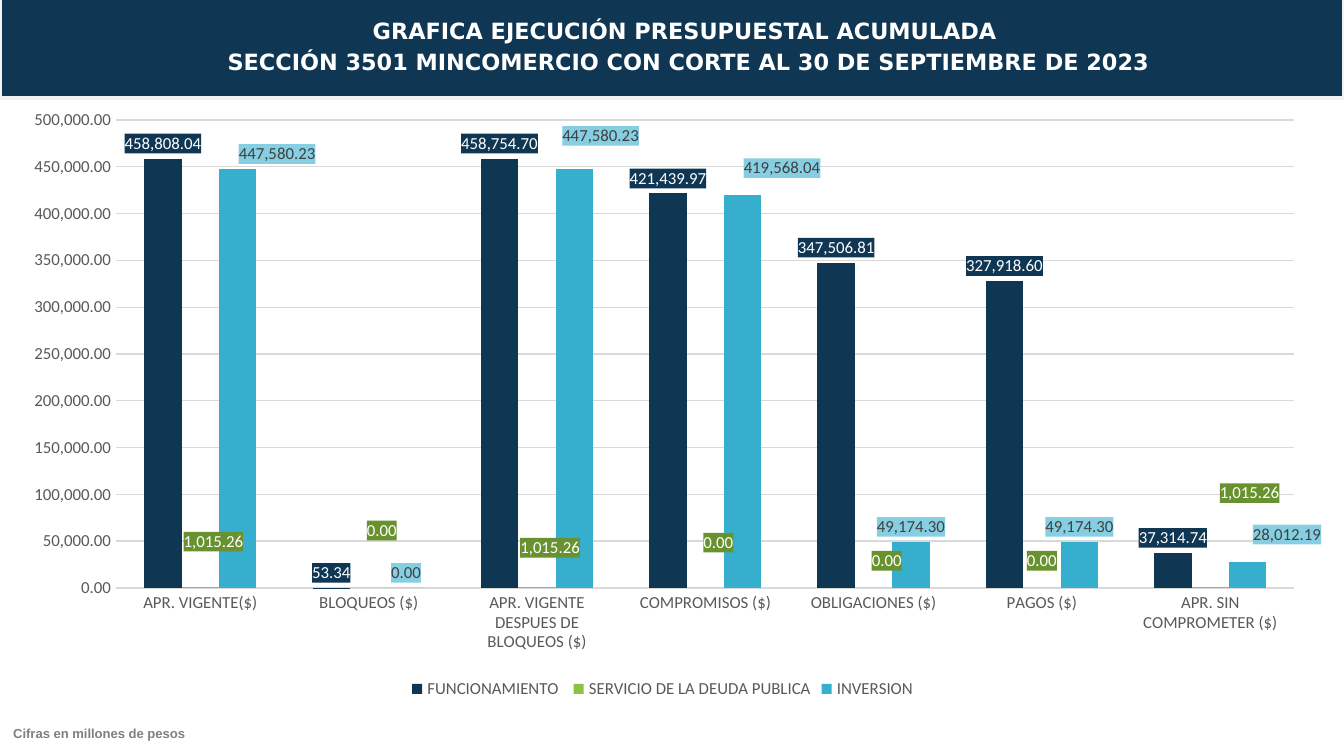
from copy import deepcopy
from dataclasses import dataclass
from lxml import etree
from pptx import Presentation
from pptx.chart.data import CategoryChartData as Data
from pptx.dml.color import RGBColor as RGB
from pptx.enum.chart import XL_CHART_TYPE as Kind, XL_LABEL_POSITION as Spot
from pptx.enum.chart import XL_LEGEND_POSITION as Side, XL_TICK_MARK as Tick
from pptx.enum.text import MSO_ANCHOR as Anchor, MSO_AUTO_SIZE as Fit, PP_ALIGN as Align
from pptx.oxml.ns import qn
from pptx.util import Inches, Pt


@dataclass(frozen=True)
class Theme:
    navy: str = "0F3754"
    green: str = "8BC145"
    blue: str = "36AFCE"
    moss: str = "68922F"
    sky: str = "86CFE2"
    white: str = "FFFFFF"
    pale: str = "F2F2F2"
    grid: str = "D9D9D9"
    gray: str = "808080"
    text: str = "595959"
    dark: str = "404040"
    head: int = 12
    base: int = 10
    small: int = 9
    note: int = 7


T = Theme()
NUM = "#,##0.00"
CATS = ["APR. VIGENTE($)", "BLOQUEOS ($)", "APR. VIGENTE DESPUES DE BLOQUEOS ($)",
        "COMPROMISOS ($)", "OBLIGACIONES ($)", "PAGOS ($)", "APR. SIN COMPROMETER ($)"]
ROWS = [
    dict(name="FUNCIONAMIENTO ", bar=T.navy, tag=T.navy, ink=T.white, moves={},
         vals=[458808.04, 53.34, 458754.70, 421439.97, 347506.81, 327918.60, 37314.74]),
    dict(name="SERVICIO DE LA DEUDA PUBLICA", bar=T.green, tag=T.moss, ink=T.white,
         vals=[1015.26, 0, 1015.26, 0, 0, 0, 1015.26],
         moves={0: (0.01, -0.05), 1: (0.01, -0.07), 2: (0.01, -0.04), 3: (0.01, -0.05),
                4: (0.01, -0.02), 5: (0, -0.02), 6: (0.03, -0.13)}),
    dict(name="INVERSION ", bar=T.blue, tag=T.sky, ink=T.dark,
         vals=[447580.23, 0, 447580.23, 419568.04, 49174.30, 49174.30, 28012.19],
         moves={0: (0.03, 0), 2: (0.02, -0.03), 3: (0.03, -0.02), 6: (0.03, -0.02)}),
]


def apply(item, traits):
    for key, val in traits.items():
        setattr(item, key, val)


def style(font, size, color, name="Calibri", bold=False):
    apply(font, dict(size=Pt(size), name=name, bold=bold))
    font.color.rgb = RGB.from_string(color)


def paint(fill, color):
    fill.solid()
    fill.fore_color.rgb = RGB.from_string(color)


def layout(**vals):
    root = etree.Element(qn("c:layout"))
    box = etree.SubElement(root, qn("c:manualLayout"))
    for key, val in vals.items():
        etree.SubElement(box, qn(f"c:{key}")).set("val", str(val))
    return root


def add_head(slide):
    band = slide.shapes.title
    apply(band, dict(left=Inches(0), top=Inches(-0.02), width=Inches(10), height=Inches(0.75)))
    paint(band.fill, T.navy)
    paint(band.line.fill, T.pale)
    band.line.width = Pt(2.25)
    frame = band.text_frame
    apply(frame, dict(margin_left=Inches(0.25), margin_right=0, margin_top=0, margin_bottom=0,
                      vertical_anchor=Anchor.MIDDLE, auto_size=Fit.NONE, word_wrap=True))
    frame.text = ("GRAFICA EJECUCIÓN PRESUPUESTAL ACUMULADA \n"
                  "SECCIÓN 3501 MINCOMERCIO CON CORTE AL 30 DE SEPTIEMBRE DE 2023")
    for para in frame.paragraphs:
        apply(para, dict(alignment=Align.CENTER, line_spacing=0.9, space_before=Pt(3.6)))
        style(para.runs[0].font, T.head, T.white, "DejaVu Sans", True)


def add_note(slide):
    box = slide.shapes.add_textbox(Inches(0), Inches(5.36), Inches(9.93), Inches(0.21))
    frame = box.text_frame
    apply(frame, dict(word_wrap=True, auto_size=Fit.SHAPE_TO_FIT_TEXT))
    para = frame.paragraphs[0]
    para.text = "Cifras en millones de pesos"
    apply(para, dict(line_spacing=0.9, space_before=Pt(8)))
    style(para.runs[0].font, T.note, T.gray, "Arial", True)


def style_axis(axis):
    apply(axis, dict(major_tick_mark=Tick.NONE, minor_tick_mark=Tick.NONE))
    style(axis.tick_labels.font, T.small, T.text)
    axis.format.line.fill.background()


def move_tag(tag, spot, parts):
    for part in parts:
        for old in tag.findall(part.tag):
            tag.remove(old)
    last = tag.find(qn("c:idx"))
    for part in [layout(x=spot[0], y=spot[1]), *map(deepcopy, parts)]:
        last.addnext(part)
        last = part


def add_tags(series, node, row):
    tags = series.data_labels
    apply(tags, dict(show_value=True, number_format=NUM, number_format_is_linked=False,
                     position=Spot.OUTSIDE_END))
    style(tags.font, T.small, row["ink"])
    group = node.find(qn("c:dLbls"))
    for lead in group.findall(qn("c:showLeaderLines")):
        lead.set("val", "0")
    look = etree.Element(qn("c:spPr"))
    fill = etree.SubElement(look, qn("a:solidFill"))
    etree.SubElement(fill, qn("a:srgbClr")).set("val", row["tag"])
    group.find(qn("c:numFmt")).addnext(look)
    parts = [group.find(qn(f"c:{name}")) for name in ("numFmt", "spPr", "txPr")]
    for idx in row["moves"]:
        series.points[idx].data_label.position = Spot.OUTSIDE_END
    for tag in group.findall(qn("c:dLbl")):
        idx = int(tag.find(qn("c:idx")).get("val"))
        move_tag(tag, row["moves"][idx], parts)


def add_bars(slide):
    data = Data(number_format=NUM)
    data.categories = CATS
    for row in ROWS:
        data.add_series(row["name"], row["vals"])
    chart = slide.shapes.add_chart(Kind.COLUMN_CLUSTERED, Inches(0.06), Inches(0.73),
                                   Inches(9.77), Inches(4.51), data).chart
    apply(chart, dict(has_title=False, has_legend=True))
    apply(chart.font, dict(size=Pt(T.base), name="Calibri"))
    apply(chart.legend, dict(position=Side.BOTTOM, include_in_layout=False))
    style(chart.legend.font, T.small, T.text)
    style_axis(chart.category_axis)
    axis = chart.value_axis
    style_axis(axis)
    apply(axis, dict(minimum_scale=0, maximum_scale=500000, major_unit=50000,
                     has_major_gridlines=True))
    apply(axis.tick_labels, dict(number_format=NUM, number_format_is_linked=False))
    line = axis.major_gridlines.format.line
    paint(line.fill, T.grid)
    line.width = Pt(0.75)
    plot = chart.plots[0]
    apply(plot, dict(gap_width=150, overlap=0, vary_by_categories=False))
    nodes = list(chart.element.iter(qn("c:ser")))
    for series, node, row in zip(plot.series, nodes, ROWS):
        paint(series.format.fill, row["bar"])
        series.invert_if_negative = False
        add_tags(series, node, row)


def main():
    deck = Presentation()
    apply(deck, dict(slide_width=Inches(10), slide_height=Inches(5.625)))
    slide = deck.slides.add_slide(deck.slide_layouts[5])
    add_head(slide)
    add_note(slide)
    add_bars(slide)
    deck.save("out.pptx")


if __name__ == "__main__":
    main()
